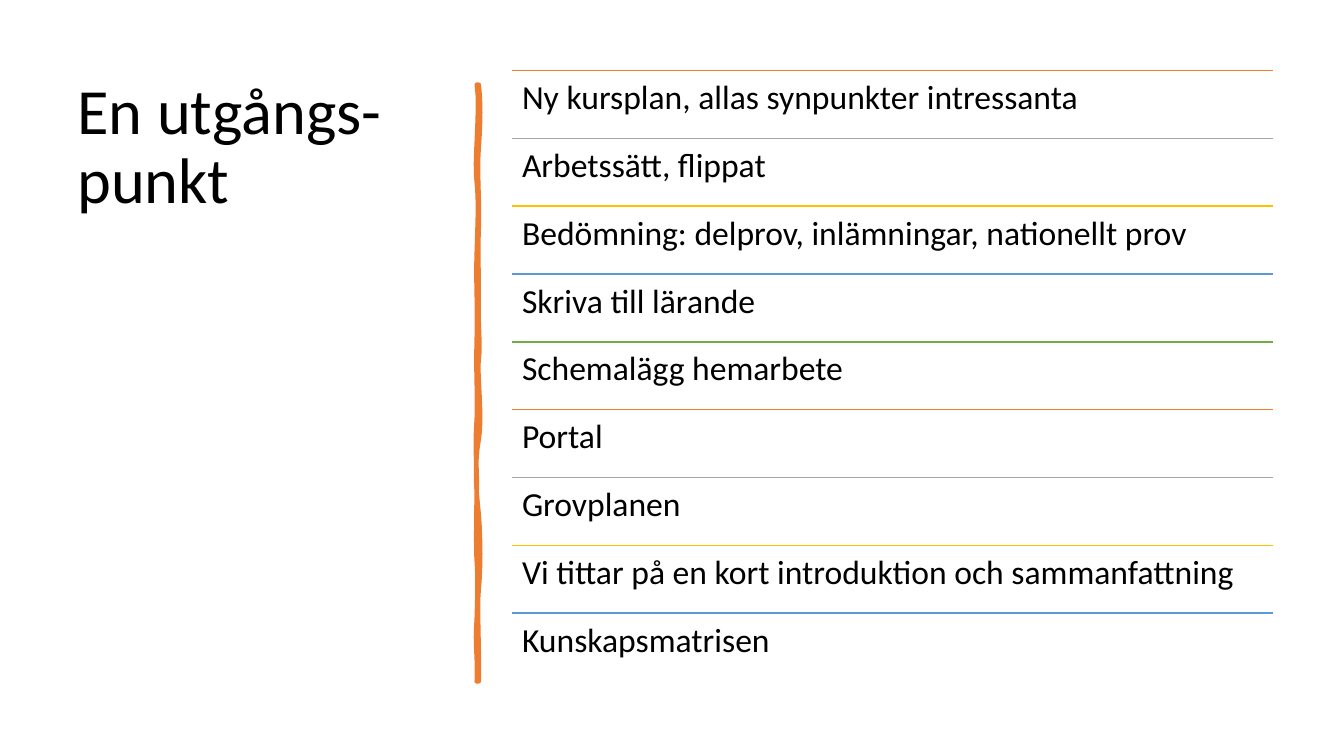
from dataclasses import dataclass
from itertools import cycle

from lxml.etree import SubElement
from pptx import Presentation
from pptx.dml.color import RGBColor as Rgb
from pptx.enum.shapes import MSO_CONNECTOR as Connector
from pptx.enum.text import MSO_ANCHOR as Anchor
from pptx.oxml.ns import qn
from pptx.util import Pt


@dataclass(frozen=True)
class Theme:
    font: str = "Calibri"
    ink: str = "000000"
    accent: str = "ED7D31"
    rules: tuple = ("ED7D31", "A5A5A5", "FFC000", "5B9BD5", "70AD47")
    title_size: float = 46
    item_size: float = 24
    rule_width: float = 1
    brush_width: float = 3.25


THEME = Theme()

TITLE = "En utgångs-punkt"
ITEMS = (
    "Ny kursplan, allas synpunkter intressanta",
    "Arbetssätt, flippat",
    "Bedömning: delprov, inlämningar, nationellt prov",
    "Skriva till lärande",
    "Schemalägg hemarbete",
    "Portal",
    "Grovplanen",
    "Vi tittar på en kort introduktion och sammanfattning",
    "Kunskapsmatrisen",
)

# List geometry
LIST_LEFT, LIST_TOP, LIST_WIDTH, ROW_HEIGHT = 365.8, 50.4, 543.6, 48.44

# Brush stroke: each edge is a chain of curves (control, control, end height)
BRUSH_TOP, BRUSH_RIGHT, BRUSH_LEFT = 60.5, 342, 340.6
RIGHT_EDGE = (
    ((343.4, 73.4), (343.4, 85.7), 105.1),
    ((340.6, 124.6), (342.7, 140.4), 162.7),
    ((341.3, 185), (342, 188.6), 211.7),
    ((341.3, 234), (343.4, 246.2), 256.3),
    ((340.6, 266.4), (344.9, 298.1), 313.9),
    ((339.1, 329), (339.8, 348.5), 367.2),
    ((343.4, 385.9), (343.4, 406.1), 420.5),
    ((340.6, 434.2), (342.7, 468), 486.7),
)
LEFT_EDGE = (
    ((341.3, 465.1), (339.1, 463.7), 441.4),
    ((341.3, 419.8), (341.3, 410.4), 401),
    ((339.8, 391.7), (340.6, 356.4), 343.4),
    ((340.6, 330.5), (339.1, 320.4), 298.8),
    ((341.3, 277.9), (339.8, 268.6), 241.2),
    ((341.3, 214.6), (339.8, 202.3), 180),
    ((341.3, 157), (342, 144), 130.3),
    ((338.4, 117.4), (343.4, 74.9), 60.5),
)


def set_format(target, values):
    for name, value in values.items():
        setattr(target, name, value)


def add_text(page, text, left, top, width, height, size, anchor=Anchor.TOP):
    box = page.shapes.add_textbox(Pt(left), Pt(top), Pt(width), Pt(height))
    frame = box.text_frame
    set_format(frame, {
        "word_wrap": True, "vertical_anchor": anchor,
        "margin_left": Pt(7.2), "margin_right": Pt(7.2),
        "margin_top": Pt(7.2), "margin_bottom": Pt(7.2),
    })
    para = frame.paragraphs[0]
    para.line_spacing = 0.9
    span = para.add_run()
    span.text = text
    set_format(span.font, {"name": THEME.font, "size": Pt(size)})
    span.font.color.rgb = Rgb.from_string(THEME.ink)


def add_rule(page, left, top, width, color):
    rule = page.shapes.add_connector(
        Connector.STRAIGHT, Pt(left), Pt(top), Pt(left + width), Pt(top))
    rule.line.width = Pt(THEME.rule_width)
    rule.line.color.rgb = Rgb.from_string(color)
    SubElement(rule._element.spPr, qn("a:effectLst"))


def edge_points(x, start_y, curves, steps=8):
    """Sample curves whose joints all lie at the same x."""
    points = [(x, start_y)]
    for first, second, end_y in curves:
        corners = (points[-1], first, second, (x, end_y))
        for step in range(1, steps + 1):
            t = step / steps
            weights = ((1 - t) ** 3, 3 * t * (1 - t) ** 2,
                       3 * t ** 2 * (1 - t), t ** 3)
            points.append(tuple(
                sum(w * corner[axis] for w, corner in zip(weights, corners))
                for axis in (0, 1)))
    return points


def add_brush_stroke(page):
    bottom = RIGHT_EDGE[-1][-1]
    outline = [(Pt(x), Pt(y)) for x, y in
               edge_points(BRUSH_RIGHT, BRUSH_TOP, RIGHT_EDGE)
               + edge_points(BRUSH_LEFT, bottom, LEFT_EDGE)]
    builder = page.shapes.build_freeform(*outline[0])
    builder.add_line_segments(outline[1:], close=True)
    stroke = builder.convert_to_shape()
    stroke.shadow.inherit = False
    stroke.fill.solid()
    stroke.fill.fore_color.rgb = Rgb.from_string(THEME.accent)
    stroke.line.color.rgb = Rgb.from_string(THEME.accent)
    stroke.line.width = Pt(THEME.brush_width)
    line = stroke.line._get_or_add_ln()
    line.set("cap", "rnd")
    SubElement(line, qn("a:round"))


def add_ruled_list(page):
    for row, (item, color) in enumerate(zip(ITEMS, cycle(THEME.rules))):
        top = LIST_TOP + row * ROW_HEIGHT
        add_rule(page, LIST_LEFT, top, LIST_WIDTH, color)
        add_text(page, item, LIST_LEFT, top, LIST_WIDTH, ROW_HEIGHT,
                 THEME.item_size)


def main():
    deck = Presentation()
    set_format(deck, {"slide_width": Pt(960), "slide_height": Pt(540)})
    page = deck.slides.add_slide(deck.slide_layouts[6])

    # Title on the left, divider, list on the right
    add_text(page, TITLE, 48.2, 50.4, 269.3, 110.9,
             THEME.title_size, Anchor.MIDDLE)
    add_brush_stroke(page)
    add_ruled_list(page)

    deck.save("out.pptx")


if __name__ == "__main__":
    main()
